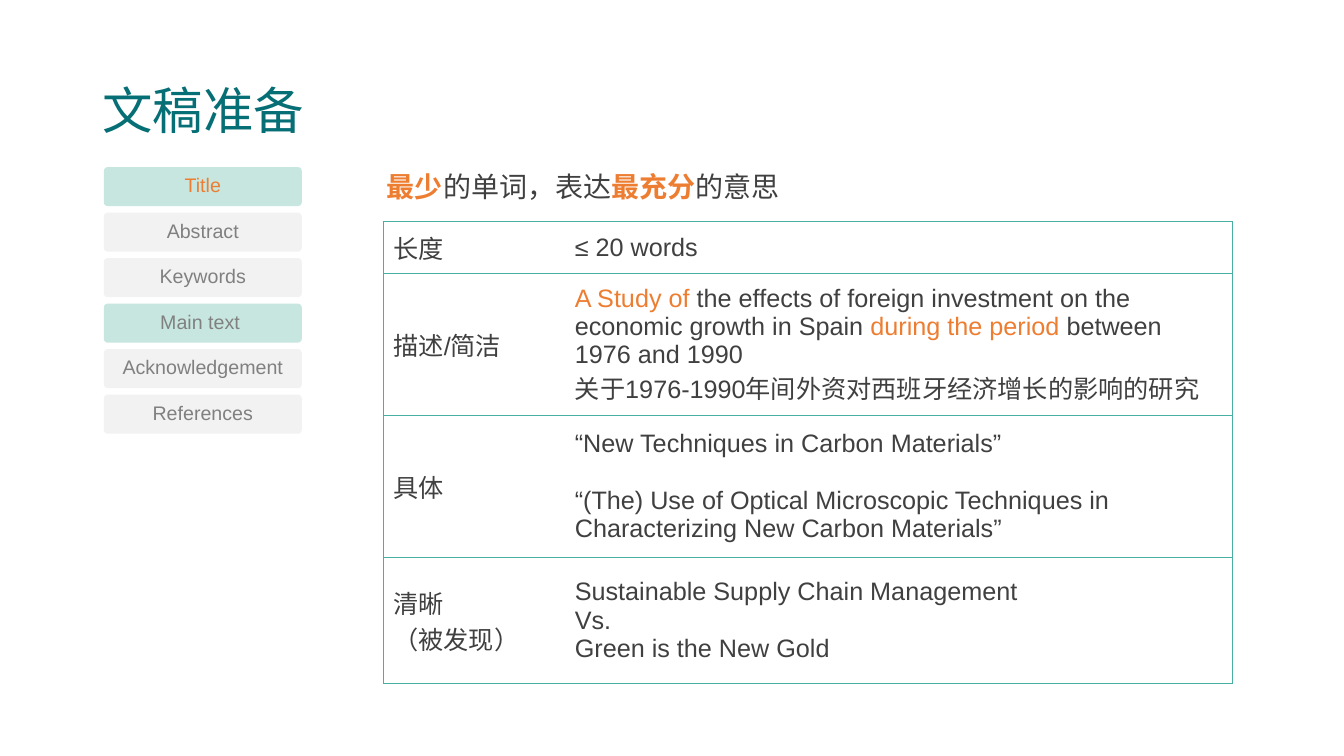
from dataclasses import dataclass

from lxml.etree import SubElement
from pptx import Presentation
from pptx.dml.color import RGBColor as Rgb
from pptx.enum.shapes import MSO_SHAPE as Preset
from pptx.enum.text import MSO_ANCHOR as Anchor, PP_ALIGN as Align
from pptx.oxml import parse_xml
from pptx.oxml.ns import nsdecls, qn
from pptx.util import Pt


@dataclass(frozen=True)
class Theme:
    latin: str = "Arial"
    asian: str = "Noto Sans CJK SC"
    heading: str = "066E75"
    accent: str = "ED7D31"
    body: str = "404040"
    muted: str = "808080"
    active: str = "C7E6E0"
    idle: str = "F2F2F2"
    rule: str = "49AFA0"
    paper: str = "FFFFFF"
    title_size: float = 36
    lead_size: float = 20
    table_size: float = 18
    menu_size: float = 14


THEME = Theme()

SECTIONS = [
    ("Title", THEME.active, THEME.accent),
    ("Abstract", THEME.idle, THEME.muted),
    ("Keywords", THEME.idle, THEME.muted),
    ("Main text ", THEME.active, THEME.muted),
    ("Acknowledgement", THEME.idle, THEME.muted),
    ("References", THEME.idle, THEME.muted),
]

LEAD = [("最少", True), ("的单词，表达", False), ("最充分", True), ("的意思", False)]

CRITERIA = [
    (37.2, [["长度"]], [["≤ 20 words"]], {}),
    (101.3, [["描述/简洁"]], [
        [("A Study of ", True),
         "the effects of foreign investment on the economic growth in Spain ",
         ("during the period", True),
         " between 1976 and 1990"],
        ["关于1976-1990年间外资对西班牙经济增长的影响的研究"],
    ], {"space_after": Pt(6)}),
    (101.3, [["具体"]], [
        ["“New Techniques in Carbon Materials”"],
        ["“(The) Use of Optical Microscopic Techniques in "
         "Characterizing New Carbon Materials”"],
    ], {"space_before": Pt(20.6)}),
    (90, [["清晰"], ["（被发现）"]], [
        ["Sustainable Supply Chain Management"], ["Vs."], ["Green is the New Gold"],
    ], {}),
]


def apply(target, formats):
    for name, value in formats.items():
        setattr(target, name, value)


def add_span(para, text, size, color, bold=False):
    span = para.add_run()
    span.text = text
    apply(span.font, {"name": THEME.latin, "size": Pt(size), "bold": bold})
    span.font.color.rgb = Rgb.from_string(color)
    SubElement(span.font._element, qn("a:ea"), typeface=THEME.asian)


def add_text_box(page, box):
    frame = page.shapes.add_textbox(*map(Pt, box)).text_frame
    frame.word_wrap = True
    return frame


def add_title(page, box):
    frame = add_text_box(page, box)
    frame.vertical_anchor = Anchor.MIDDLE
    para = frame.paragraphs[0]
    para.line_spacing = 0.9
    add_span(para, "文稿准备", THEME.title_size, THEME.heading)


def add_lead(page, box):
    para = add_text_box(page, box).paragraphs[0]
    for text, strong in LEAD:
        color = THEME.accent if strong else THEME.body
        add_span(para, text, THEME.lead_size, color, strong)


def add_section_menu(page, box, gap):
    left, top, width, height = box
    button_height = (height - gap * (len(SECTIONS) - 1)) / len(SECTIONS)
    for index, (label, fill, color) in enumerate(SECTIONS):
        button_top = top + index * (button_height + gap)
        button = page.shapes.add_shape(
            Preset.ROUNDED_RECTANGLE,
            *map(Pt, (left, button_top, width, button_height)))
        button.adjustments[0] = 0.1
        button.shadow.inherit = False
        button.fill.solid()
        button.fill.fore_color.rgb = Rgb.from_string(fill)
        button.line.fill.background()
        margins = {f"margin_{side}": Pt(1) for side in ("left", "top", "right", "bottom")}
        apply(button.text_frame,
              margins | {"vertical_anchor": Anchor.MIDDLE, "word_wrap": True})
        para = button.text_frame.paragraphs[0]
        apply(para, {"alignment": Align.CENTER, "line_spacing": 0.9})
        add_span(para, label, THEME.menu_size, color)


def set_borders(cell, visible):
    properties = cell._tc.get_or_add_tcPr()
    for index, side in enumerate("LRTB"):
        paint = (f'<a:solidFill><a:srgbClr val="{THEME.rule}"/></a:solidFill>'
                 if side in visible else "<a:noFill/>")
        properties.insert(index, parse_xml(
            f'<a:ln{side} {nsdecls("a")} w="{Pt(1)}">{paint}</a:ln{side}>'))


def fill_cell(cell, lines, visible, last_format):
    cell.vertical_anchor = Anchor.MIDDLE
    cell.fill.solid()
    cell.fill.fore_color.rgb = Rgb.from_string(THEME.paper)
    set_borders(cell, visible)
    frame = cell.text_frame
    for index, line in enumerate(lines):
        para = frame.add_paragraph() if index else frame.paragraphs[0]
        for part in line:
            text, strong = (part, False) if isinstance(part, str) else part
            color = THEME.accent if strong else THEME.body
            add_span(para, text, THEME.table_size, color)
    apply(frame.paragraphs[-1], last_format)


def add_criteria_table(page, box, label_width):
    width = box[2]
    table = page.shapes.add_table(len(CRITERIA), 2, *map(Pt, box)).table
    apply(table, {"first_row": False, "horz_banding": False})
    table.columns[0].width = Pt(label_width)
    table.columns[1].width = Pt(width - label_width)
    for index, (height, label, details, last_format) in enumerate(CRITERIA):
        table.rows[index].height = Pt(height)
        fill_cell(table.cell(index, 0), label, "LTB", {})
        fill_cell(table.cell(index, 1), details, "RTB", last_format)


def main():
    deck = Presentation()
    apply(deck, {"slide_width": Pt(960), "slide_height": Pt(540)})
    page = deck.slides.add_slide(deck.slide_layouts[6])
    add_title(page, (66.2, 51, 828, 60))
    add_lead(page, (269.3, 117.3, 589.7, 38))
    add_criteria_table(page, (273.8, 158.4, 606.6, 329.8), 129.6)
    add_section_menu(page, (74.2, 119.3, 141.4, 190.5), 4.6)
    deck.save("out.pptx")


if __name__ == "__main__":
    main()
